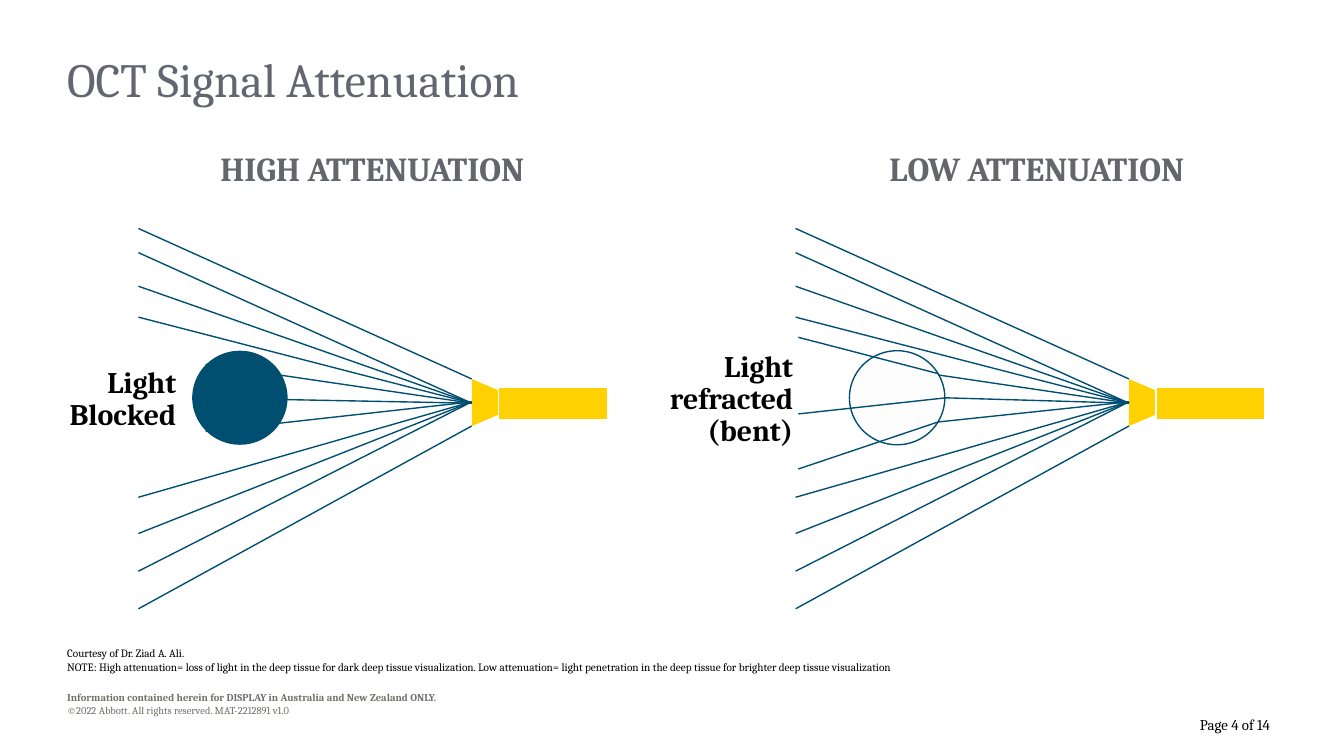
from typing import NamedTuple

from lxml.etree import SubElement
from pptx import Presentation
from pptx.dml.color import RGBColor
from pptx.enum.shapes import MSO_CONNECTOR as Connector, MSO_SHAPE as Preset
from pptx.enum.text import MSO_ANCHOR as Anchor, MSO_AUTO_SIZE as AutoSize, PP_ALIGN as Align
from pptx.oxml.ns import qn
from pptx.shapes.autoshape import Shape
from pptx.shapes.group import GroupShape
from pptx.slide import Slide
from pptx.util import Emu, Pt

PX = 9144
FONT = "Cambria"
WHITE = RGBColor(0xFF, 0xFF, 0xFF)
BLACK = RGBColor(0x00, 0x00, 0x00)
YELLOW = RGBColor(0xFF, 0xD1, 0x00)
NAVY = RGBColor(0x00, 0x4F, 0x71)
PALE = RGBColor(0xF2, 0xF2, 0xF2)
TITLE_GREY = RGBColor(0x62, 0x66, 0x70)
HEADING_GREY = RGBColor(0x63, 0x66, 0x6A)
FOOTER_GREY = RGBColor(0x70, 0x70, 0x68)


class Area(NamedTuple):
    left: int
    top: int
    width: int
    height: int


class Ray(NamedTuple):
    start_x: int
    start_y: int
    end_x: int
    end_y: int


class Label(NamedTuple):
    area: Area
    text: str
    size: float
    color: RGBColor
    bold: bool = False
    align: Align = Align.LEFT
    anchor: Anchor = Anchor.TOP
    spacing: float = 1.0
    inset: tuple[int, int] = (0, 0)
    wrap: bool = True


class Panel(NamedTuple):
    shift: int
    inner_rays: list[Ray]
    bent_rays: list[Ray]
    solid: bool


PANEL_STEP = 489
PROBE = Area(354, 279, 35, 41)
HANDLE = Area(371, 288, 81, 24)
TARGET = Area(143, 261, 71, 70)
OUTER_RAYS = [
    Ray(351, start_y, 103, end_y)
    for start_y, end_y in [(282, 170), (317, 453), (300, 188), (300, 213),
                           (300, 236), (299, 425), (299, 397), (299, 370)]
]
PANELS = [
    Panel(0, [Ray(351, 300, 143, 296), Ray(351, 300, 153, 271), Ray(351, 299, 153, 321)], [], True),
    Panel(
        PANEL_STEP,
        [Ray(351, 300, 214, 296), Ray(351, 300, 209, 279), Ray(351, 299, 209, 314)],
        [Ray(209, 314, 105, 349), Ray(209, 278, 105, 251), Ray(215, 296, 105, 308)],
        False,
    ),
]

TITLE = Label(Area(50, 33, 662, 59), "OCT Signal Attenuation", 25.5, TITLE_GREY,
              anchor=Anchor.MIDDLE, spacing=0.8)
CAPTION = Label(Area(28, 268, 113, 59), "Light\nBlocked", 16, BLACK, True, Align.RIGHT,
                Anchor.MIDDLE, 0.9, (10, 5), False)
HEADING = Label(Area(123, 105, 308, 40), "HIGH ATTENUATION", 18, HEADING_GREY, True, Align.CENTER,
                inset=(10, 5), wrap=False)
FOOTER = Label(
    Area(50, 504, 464, 29),
    "Information contained herein for DISPLAY in Australia and New Zealand ONLY.\n"
    "©2022 Abbott. All rights reserved. MAT-2212891 v1.0",
    5.6, FOOTER_GREY, anchor=Anchor.BOTTOM,
)
LABELS = [
    CAPTION,
    CAPTION._replace(area=Area(473, 256, 127, 83), text="Light\nrefracted\n(bent)"),
    HEADING,
    HEADING._replace(area=Area(623, 105, 297, 40), text="LOW ATTENUATION"),
    Label(
        Area(50, 481, 700, 20),
        "Courtesy of Dr. Ziad A. Ali.\n"
        "NOTE: High attenuation= loss of light in the deep tissue for dark deep tissue visualization. "
        "Low attenuation= light penetration in the deep tissue for brighter deep tissue visualization",
        6, BLACK,
    ),
    Label(Area(796, 510, 149, 41), "Page 4 of 14", 8, BLACK, align=Align.RIGHT,
          anchor=Anchor.BOTTOM, inset=(0, 5)),
]


def px(length: int) -> Emu:
    return Emu(length * PX)


def write_label(box: Shape, label: Label) -> None:
    box.left, box.top, box.width, box.height = map(px, label.area)
    frame = box.text_frame
    frame.text = label.text
    frame.word_wrap = label.wrap
    frame.auto_size = AutoSize.NONE if label.wrap else AutoSize.SHAPE_TO_FIT_TEXT
    frame.vertical_anchor = label.anchor
    frame.margin_left = frame.margin_right = px(label.inset[0])
    frame.margin_top = frame.margin_bottom = px(label.inset[1])
    for para in frame.paragraphs:
        para.alignment = label.align
        para.line_spacing = label.spacing
        for span in para.runs:
            span.font.name = FONT
            span.font.size = Pt(label.size)
            span.font.bold = label.bold
            span.font.color.rgb = label.color


def add_label(page: Slide, label: Label) -> Shape:
    box = page.shapes.add_textbox(*map(px, label.area))
    write_label(box, label)
    return box


def add_preset(group: GroupShape, preset: Preset, area: Area, shift: int,
               fill: RGBColor, line: RGBColor | None = None) -> Shape:
    moved = area._replace(left=area.left + shift)
    shape = group.shapes.add_shape(preset, *map(px, moved))
    shape.shadow.inherit = False
    shape.fill.solid()
    shape.fill.fore_color.rgb = fill
    if line is None:
        shape.line.fill.background()
    else:
        shape.line.color.rgb = line
        shape.line.width = Pt(0.75)
    return shape


def add_ray(group: GroupShape, ray: Ray, shift: int) -> None:
    moved = ray._replace(start_x=ray.start_x + shift, end_x=ray.end_x + shift)
    line = group.shapes.add_connector(Connector.STRAIGHT, *map(px, moved))
    line.line.color.rgb = NAVY
    line.line.width = Pt(0.75)
    SubElement(line._element.spPr, qn("a:effectLst"))


def set_opacity(shape: Shape, percent: int) -> None:
    color = shape._element.spPr.find(qn("a:solidFill"))[0]
    SubElement(color, qn("a:alpha")).set("val", str(percent * 1000))


def add_panel(page: Slide, panel: Panel) -> None:
    group = page.shapes.add_group_shape()
    probe = add_preset(group, Preset.ISOSCELES_TRIANGLE, PROBE, panel.shift, YELLOW)
    probe.rotation = 90
    add_preset(group, Preset.RECTANGLE, HANDLE, panel.shift, YELLOW, WHITE)
    for ray in OUTER_RAYS + panel.inner_rays:
        add_ray(group, ray, panel.shift)
    if panel.solid:
        add_preset(group, Preset.OVAL, TARGET, panel.shift, NAVY)
    else:
        target = add_preset(group, Preset.OVAL, TARGET, panel.shift, PALE, NAVY)
        set_opacity(target, 12)
    for ray in panel.bent_rays:
        add_ray(group, ray, panel.shift)


def main() -> None:
    deck = Presentation()
    deck.slide_width = px(1000)
    deck.slide_height = Emu(deck.slide_width * 9 // 16)
    page = deck.slides.add_slide(deck.slide_layouts[5])
    write_label(page.shapes.title, TITLE)
    footer = add_label(page, FOOTER)
    footer.text_frame.paragraphs[0].runs[0].font.bold = True
    for panel in PANELS:
        add_panel(page, panel)
    for label in LABELS:
        add_label(page, label)
    deck.save("out.pptx")


if __name__ == "__main__":
    main()
